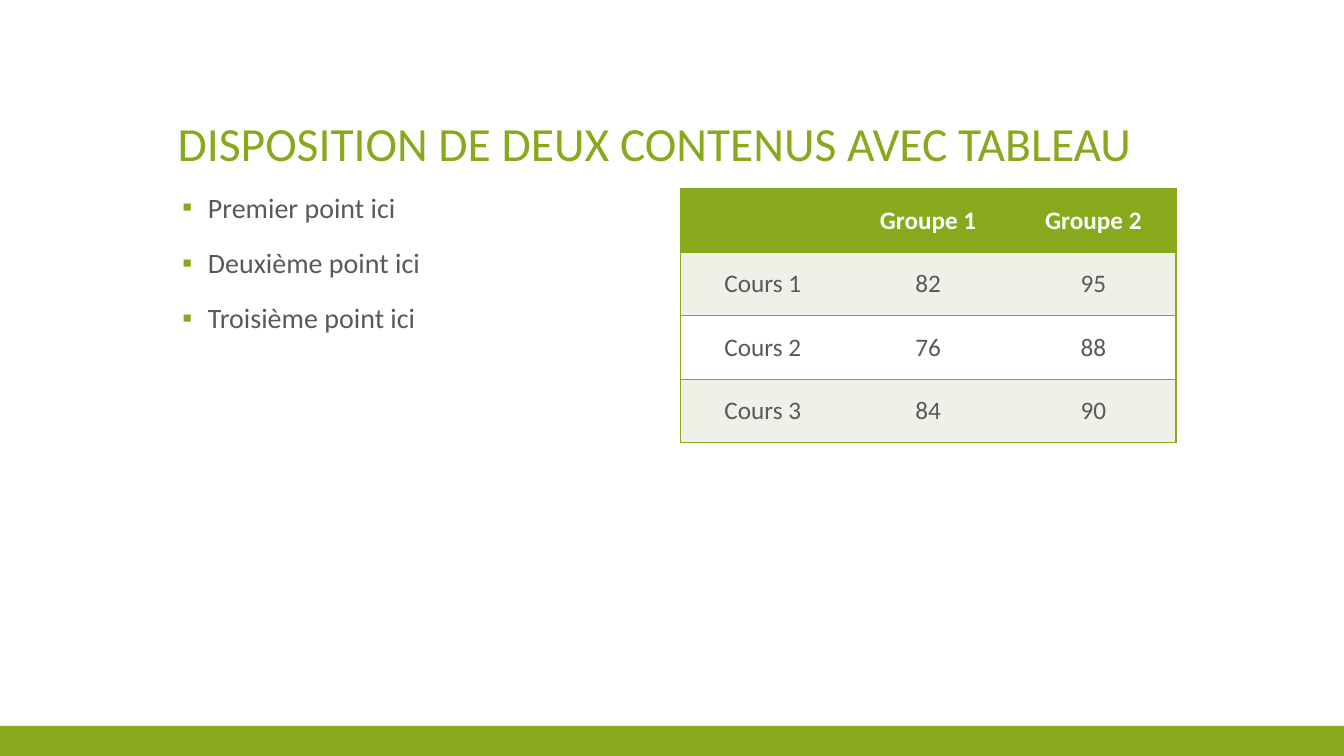
import pptx
import pptx.dml.color
import pptx.enum.shapes
import pptx.enum.text
import pptx.oxml
import pptx.oxml.ns
import pptx.util
from lxml import etree

TITLE = "DISPOSITION DE DEUX CONTENUS AVEC TABLEAU"
POINTS = ["Premier point ici", "Deuxième point ici", "Troisième point ici"]
SCORES = [
    ["", "Groupe 1", "Groupe 2"],
    ["Cours 1", "82", "95"],
    ["Cours 2", "76", "88"],
    ["Cours 3", "84", "90"],
]

FONT = "Calibri"
GREEN, GREY, WHITE, PALE = "87A91B", "595959", "FFFFFF", "EDF1E8"

Cm, Pt = pptx.util.Cm, pptx.util.Pt
ANCHOR = pptx.enum.text.MSO_ANCHOR
PAGE_WIDTH, PAGE_HEIGHT = 33.87, 19.05
FOOTER_HEIGHT = 0.76
MARGIN = 4.23
TITLE_TOP, TITLE_HEIGHT = 1.27, 3.18
BODY_TOP, BODY_HEIGHT = 4.76, 12.38
COLUMN_WIDTH = 12.5
TABLE_LEFT = PAGE_WIDTH - MARGIN - COLUMN_WIDTH
ROW_HEIGHT = 1.6


def color(code):
    return pptx.dml.color.RGBColor.from_string(code)


def paint(target, code):
    target.fill.solid()
    target.fill.fore_color.rgb = color(code)


def style(para, size, code, bold=False):
    para.font.name = FONT
    para.font.size = Pt(size)
    para.font.bold = bold
    para.font.color.rgb = color(code)


def add_text(page, left, top, width, height, lines, size, code, anchor):
    box = page.shapes.add_textbox(Cm(left), Cm(top), Cm(width), Cm(height))
    frame = box.text_frame
    frame.word_wrap = True
    frame.vertical_anchor = anchor
    frame.text = "\n".join(lines)
    for para in frame.paragraphs:
        para.line_spacing = 0.9
        style(para, size, code)
    return frame


def add_bullet(para):
    para.space_before = Pt(18)
    properties = para._p.get_or_add_pPr()
    properties.set("marL", str(Cm(0.76)))
    properties.set("indent", str(Cm(-0.64)))
    namespace = pptx.oxml.ns.nsdecls("a")
    bullet_parts = [
        f'<a:buClr {namespace}><a:srgbClr val="{GREEN}"/></a:buClr>',
        f'<a:buFont {namespace} typeface="{FONT}"/>',
        f'<a:buChar {namespace} char="▪"/>',
    ]
    following = properties.find(pptx.oxml.ns.qn("a:defRPr"))
    for part in bullet_parts:
        element = pptx.oxml.parse_xml(part)
        if following is None:
            properties.append(element)
        else:
            following.addprevious(element)


def add_borders(cell, sides):
    properties = cell._tc.get_or_add_tcPr()
    for position, side in enumerate("LRTB"):
        line = etree.Element(pptx.oxml.ns.qn(f"a:ln{side}"), w=str(Pt(1)))
        if side in sides:
            fill = etree.SubElement(line, pptx.oxml.ns.qn("a:solidFill"))
            etree.SubElement(fill, pptx.oxml.ns.qn("a:srgbClr"), val=GREEN)
        else:
            etree.SubElement(line, pptx.oxml.ns.qn("a:noFill"))
        properties.insert(position, line)


def add_scores(page):
    row_count, column_count = len(SCORES), len(SCORES[0])
    table = page.shapes.add_table(
        row_count, column_count, Cm(TABLE_LEFT), Cm(BODY_TOP),
        Cm(COLUMN_WIDTH), Cm(ROW_HEIGHT * row_count)).table
    table.horz_banding = False
    for row, values in enumerate(SCORES):
        header = row == 0
        for column, value in enumerate(values):
            cell = table.cell(row, column)
            cell.text = value
            cell.vertical_anchor = ANCHOR.MIDDLE
            para = cell.text_frame.paragraphs[0]
            para.alignment = pptx.enum.text.PP_ALIGN.CENTER
            style(para, 18, WHITE if header else GREY, header)
            paint(cell, GREEN if header else PALE if row % 2 else WHITE)
            sides = "TB"
            if column == 0:
                sides += "L"
            if column == column_count - 1:
                sides += "R"
            add_borders(cell, sides)


def main():
    deck = pptx.Presentation()
    deck.slide_width, deck.slide_height = Cm(PAGE_WIDTH), Cm(PAGE_HEIGHT)
    page = deck.slides.add_slide(deck.slide_layouts[6])

    footer = page.shapes.add_shape(
        pptx.enum.shapes.MSO_SHAPE.RECTANGLE, 0,
        Cm(PAGE_HEIGHT - FOOTER_HEIGHT), Cm(PAGE_WIDTH), Cm(FOOTER_HEIGHT))
    footer.shadow.inherit = False
    paint(footer, GREEN)
    footer.line.fill.background()

    add_text(page, MARGIN, TITLE_TOP, PAGE_WIDTH - 2 * MARGIN, TITLE_HEIGHT,
             [TITLE], 34, GREEN, ANCHOR.BOTTOM)
    points = add_text(page, MARGIN, BODY_TOP, COLUMN_WIDTH, BODY_HEIGHT,
                      POINTS, 20, GREY, ANCHOR.TOP)
    for para in points.paragraphs:
        add_bullet(para)
    add_scores(page)
    deck.save("out.pptx")


if __name__ == "__main__":
    main()
